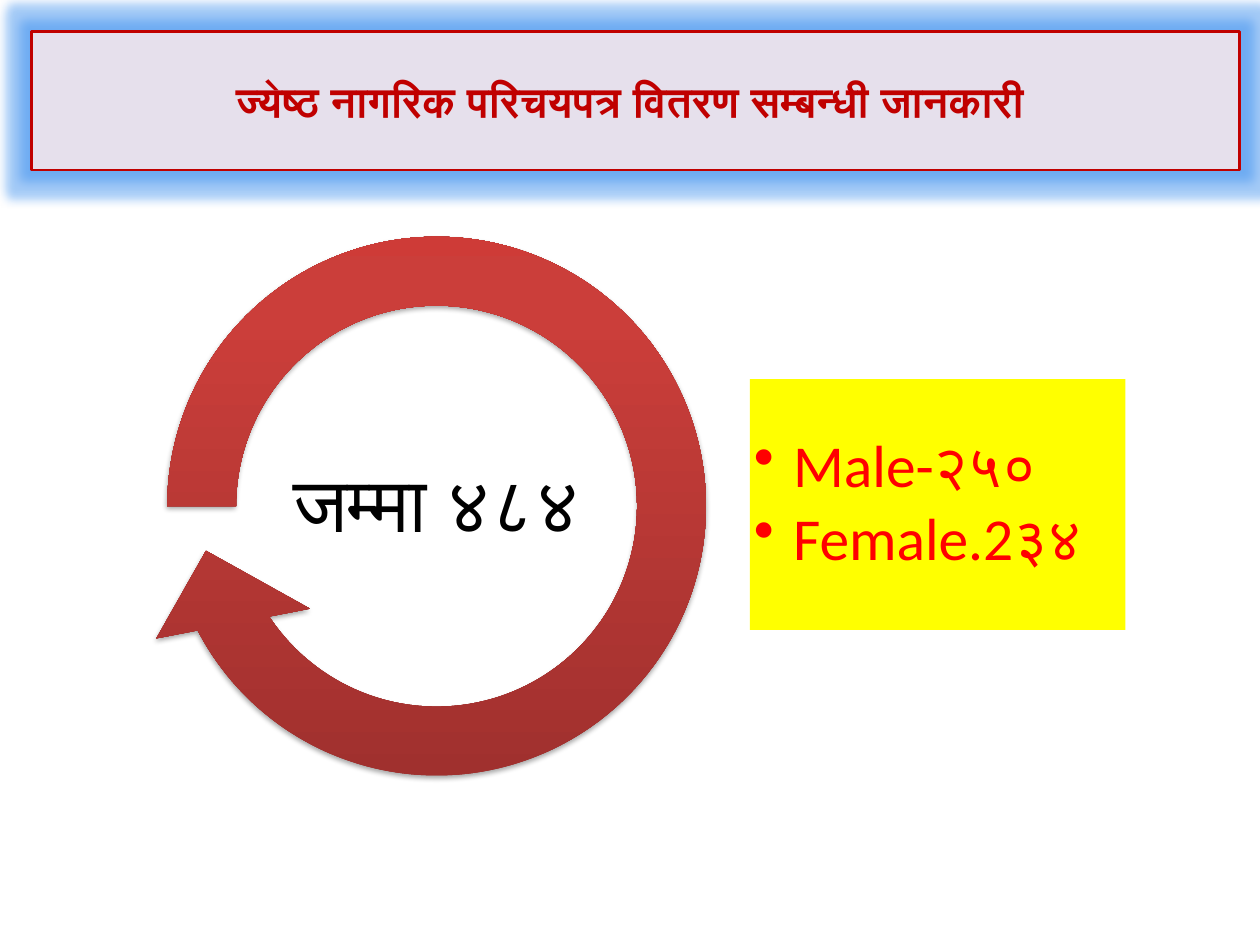
from dataclasses import dataclass
from lxml.etree import fromstring
from pptx import Presentation
from pptx.dml.color import RGBColor as RGB
from pptx.enum.shapes import MSO_SHAPE as Kind
from pptx.enum.text import MSO_ANCHOR as Anchor, PP_ALIGN as Align
from pptx.oxml.ns import nsdecls
from pptx.util import Pt


@dataclass(frozen=True)
class Theme:
    font: str = "Calibri"
    edge: str = "C00000"
    pale: str = "E6E0EC"
    glow: str = "1F7FEC"
    note: str = "FFFF00"
    red: str = "FF0000"
    ink: str = "000000"
    ring: tuple = ((0, "9C2F2D"), (80, "CB3E3A"), (100, "CE3B37"))
    head: int = 24
    item: int = 34
    total: int = 44


def node(tag, body, attrs=""):
    return fromstring(f"<a:{tag} {nsdecls('a')} {attrs}>{body}</a:{tag}>")


def tint(color, alpha):
    """Colour XML with its opacity in percent."""
    return f'<a:srgbClr val="{color}"><a:alpha val="{alpha * 1000}"/></a:srgbClr>'


def assign(item, values):
    for name, value in values.items():
        setattr(item, name, value)


class Deck:
    def __init__(self, theme):
        self.theme = theme
        self.show = Presentation()
        assign(self.show, {"slide_width": Pt(720), "slide_height": Pt(540)})
        self.slide = self.show.slides.add_slide(self.show.slide_layouts[6])

    def shape(self, kind, box):
        shape = self.slide.shapes.add_shape(kind, *map(Pt, box))
        shape.shadow.inherit = False
        shape.line.fill.background()
        return shape

    def panel(self, box, fill, line=None, glow=None):
        shape = self.shape(Kind.RECTANGLE, box)
        shape.fill.solid()
        shape.fill.fore_color.rgb = RGB.from_string(fill)
        if line:
            shape.line.color.rgb = RGB.from_string(line)
            shape.line.width = Pt(1.5)
        if glow:
            halo = node("glow", tint(glow, 40), f'rad="{Pt(11)}"')
            shape.element.spPr.find("{*}effectLst").append(halo)
        return shape

    def arrow(self, box, turns):
        """Draw the round arrow with its gradient and soft shadow."""
        shape = self.shape(Kind.CIRCULAR_ARROW, box)
        for i, turn in enumerate(turns):
            shape.adjustments[i] = turn
        stops = "".join(
            f'<a:gs pos="{pos * 1000}"><a:srgbClr val="{color}"/></a:gs>'
            for pos, color in self.theme.ring)
        fill = node("gradFill", f'<a:gsLst>{stops}</a:gsLst>'
                    '<a:lin ang="16200000" scaled="0"/>', 'rotWithShape="1"')
        props = shape.element.spPr
        props.find("{*}prstGeom").addnext(fill)
        shade = node("outerShdw", tint(self.theme.ink, 35),
                     f'blurRad="{Pt(3.1)}" dist="{Pt(1.8)}" dir="5400000" rotWithShape="0"')
        props.find("{*}effectLst").append(shade)

    def label(self, box):
        return self.slide.shapes.add_textbox(*map(Pt, box))

    def words(self, shape, lines, size, color, align=Align.CENTER,
              bold=False, inset=None, after=None, bullet=False):
        frame = shape.text_frame
        assign(frame, {"word_wrap": True, "vertical_anchor": Anchor.MIDDLE})
        if inset is not None:
            sides = ("left", "top", "right", "bottom")
            assign(frame, {f"margin_{side}": Pt(inset) for side in sides})
        frame.text = "\n".join(lines)
        for para in frame.paragraphs:
            para.alignment = align
            if after is not None:
                assign(para, {"line_spacing": 0.9, "space_after": Pt(after)})
            if bullet:
                props = para._p.get_or_add_pPr()
                props.set("marL", str(Pt(22.5)))
                props.set("indent", str(Pt(-22.5)))
                props.append(node("buChar", "", 'char="•"'))
            for run in para.runs:
                assign(run.font, {"name": self.theme.font, "size": Pt(size), "bold": bold})
                run.font.color.rgb = RGB.from_string(color)


def main():
    look = Theme()
    deck = Deck(look)
    title = deck.panel((18, 18, 690.5, 79.2), look.pale, look.edge, look.glow)
    deck.words(title, ["ज्येष्ठ नागरिक परिचयपत्र वितरण सम्बन्धी जानकारी "],
               look.head, look.edge, bold=True)
    deck.arrow((70.5, 110.2, 358, 358), (0.11, 11.42, 90, 108, 0.125))
    counts = deck.panel((428.5, 216.7, 214.6, 143.3), look.note)
    deck.words(counts, ["Male-२५०", "Female.2३४"], look.item, look.red,
               align=Align.LEFT, inset=2.2, after=5.1, bullet=True)
    total = deck.label((149.8, 239.8, 199.4, 100))
    deck.words(total, ["जम्मा ४८४"], look.total, look.ink, inset=2.2, after=15.4)
    deck.show.save("out.pptx")


if __name__ == "__main__":
    main()
